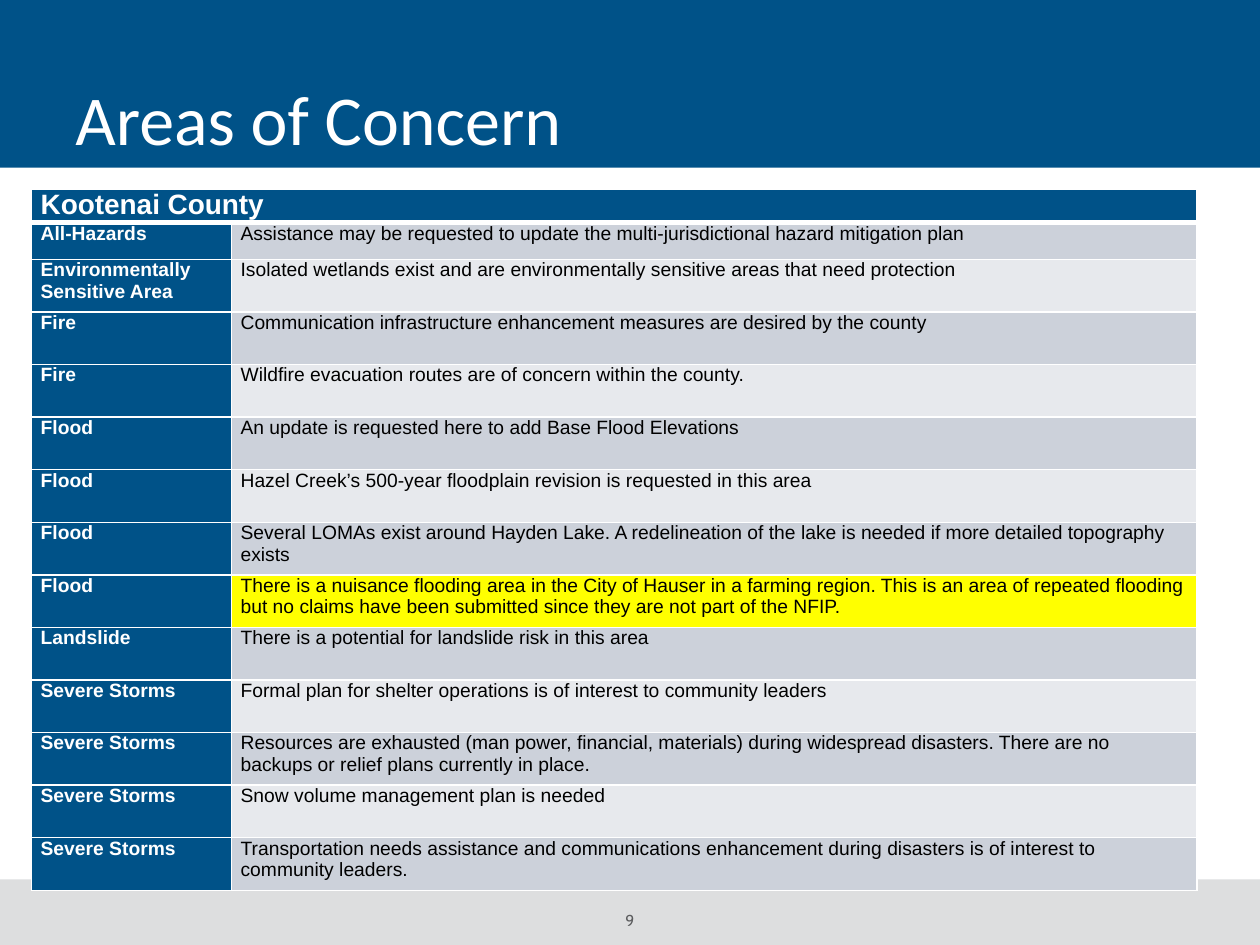
from lxml.etree import SubElement
from pptx import Presentation
from pptx.dml.color import RGBColor
from pptx.enum.shapes import MSO_SHAPE as Shape
from pptx.enum.text import MSO_ANCHOR as Anchor, PP_ALIGN as Align
from pptx.oxml.ns import qn
from pptx.util import Cm, Pt

BLUE = RGBColor(0x00, 0x52, 0x88)
WHITE = RGBColor(0xFF, 0xFF, 0xFF)
BLACK = RGBColor(0x00, 0x00, 0x00)
PALE = RGBColor(0xDD, 0xDE, 0xDF)
GRAY = RGBColor(0x5B, 0x5C, 0x5E)
ODD_ROW = RGBColor(0xCC, 0xD1, 0xDA)
EVEN_ROW = RGBColor(0xE7, 0xE9, 0xED)
YELLOW = RGBColor(0xFF, 0xFF, 0x00)

PAGE_WIDTH, PAGE_HEIGHT = 25.4, 19.05
COLUMN_WIDTHS = (4.03, 19.46)
HEADER_HEIGHT, FIRST_HEIGHT, ROW_HEIGHT = 0.43, 0.74, 1.06
HIGHLIGHTED_ROW = 8

COUNTY = "Kootenai County"
CONCERNS = [
    ("All-Hazards", "Assistance may be requested to update the multi-jurisdictional hazard mitigation plan"),
    ("Environmentally Sensitive Area",
     "Isolated wetlands exist and are environmentally sensitive areas that need protection"),
    ("Fire", "Communication infrastructure enhancement measures are desired by the county"),
    ("Fire", "Wildfire evacuation routes are of concern within the county."),
    ("Flood", "An update is requested here to add Base Flood Elevations"),
    ("Flood", "Hazel Creek’s 500-year floodplain revision is requested in this area"),
    ("Flood", "Several LOMAs exist around Hayden Lake. A redelineation of the lake is needed "
              "if more detailed topography exists"),
    ("Flood", "There is a nuisance flooding area in the City of Hauser in a farming region. This is an area "
              "of repeated flooding but no claims have been submitted since they are not part of the NFIP."),
    ("Landslide", "There is a potential for landslide risk in this area"),
    ("Severe Storms", "Formal plan for shelter operations is of interest to community leaders"),
    ("Severe Storms", "Resources are exhausted (man power, financial, materials) during widespread disasters. "
                      "There are no backups or relief plans currently in place."),
    ("Severe Storms", "Snow volume management plan is needed"),
    ("Severe Storms", "Transportation needs assistance and communications enhancement during disasters "
                      "is of interest to community leaders."),
]


def style_font(para, name, size, color, bold=False):
    font = para.font
    font.name, font.size, font.bold = name, Pt(size), bold
    font.color.rgb = color


def add_band(page, left, top, width, height, color):
    band = page.shapes.add_shape(Shape.RECTANGLE, Cm(left), Cm(top), Cm(width), Cm(height))
    band.shadow.inherit = False
    band.fill.solid()
    band.fill.fore_color.rgb = color
    band.line.fill.background()


def add_text(page, left, top, width, height, text):
    box = page.shapes.add_textbox(Cm(left), Cm(top), Cm(width), Cm(height))
    box.text_frame.word_wrap = True
    para = box.text_frame.paragraphs[0]
    para.text = text
    return box.text_frame, para


def add_title(page, left, top, width, height):
    add_band(page, left, top, width, height, BLUE)
    frame, para = add_text(page, left + 1.27, top + 0.13, width - 2.54, height - 0.18, "Areas of Concern")
    frame.vertical_anchor = Anchor.BOTTOM
    para.line_spacing = 0.8
    style_font(para, "Calibri", 40, WHITE)


def add_footer(page, left, top, width, height):
    add_band(page, left, top, width, height, PALE)
    number_width = 4.24
    frame, para = add_text(page, left + (width - number_width) / 2, top + 0.63, number_width, 0.38, "9")
    frame.margin_left = frame.margin_right = frame.margin_top = frame.margin_bottom = 0
    para.alignment = Align.CENTER
    style_font(para, "Cabin", 9, GRAY)


def set_borders(cell, bottom_width):
    properties = cell._tc.get_or_add_tcPr()
    for side, width in (("L", 1), ("R", 1), ("T", 1), ("B", bottom_width)):
        line = SubElement(properties, qn(f"a:ln{side}"), w=str(Pt(width)))
        fill = SubElement(line, qn("a:solidFill"))
        SubElement(fill, qn("a:srgbClr"), val=str(WHITE))


def fill_cell(cell, text, fill, color, bold, size=11, bottom_width=1):
    set_borders(cell, bottom_width)
    cell.fill.solid()
    cell.fill.fore_color.rgb = fill
    cell.margin_left = cell.margin_right = Cm(0.18)
    cell.margin_top = cell.margin_bottom = 0
    para = cell.text_frame.paragraphs[0]
    para.text = text
    style_font(para, "Arial", size, color, bold)


def add_concerns(page, left, top, width, height):
    table = page.shapes.add_table(len(CONCERNS) + 1, len(COLUMN_WIDTHS),
                                  Cm(left), Cm(top), Cm(width), Cm(height)).table
    for column, column_width in zip(table.columns, COLUMN_WIDTHS):
        column.width = Cm(column_width)
    heights = [HEADER_HEIGHT, FIRST_HEIGHT] + [ROW_HEIGHT] * (len(CONCERNS) - 1)
    for row, row_height in zip(table.rows, heights):
        row.height = Cm(row_height)

    # County header across both columns
    table.cell(0, 0).merge(table.cell(0, 1))
    fill_cell(table.cell(0, 0), COUNTY, BLUE, WHITE, True, size=16, bottom_width=3)

    # One row per concern, shaded in turn
    for index, (hazard, concern) in enumerate(CONCERNS, 1):
        shade = ODD_ROW if index % 2 else EVEN_ROW
        if index == HIGHLIGHTED_ROW:
            shade = YELLOW
        fill_cell(table.cell(index, 0), hazard, BLUE, WHITE, True)
        fill_cell(table.cell(index, 1), concern, shade, BLACK, False)


def main():
    deck = Presentation()
    deck.slide_width, deck.slide_height = Cm(PAGE_WIDTH), Cm(PAGE_HEIGHT)
    page = deck.slides.add_slide(deck.slide_layouts[6])
    add_footer(page, 0, 17.73, PAGE_WIDTH, 1.32)
    add_title(page, 0, 0, PAGE_WIDTH, 3.38)
    add_concerns(page, 0.64, 3.81, sum(COLUMN_WIDTHS), 14.12)
    deck.save("out.pptx")


if __name__ == "__main__":
    main()
